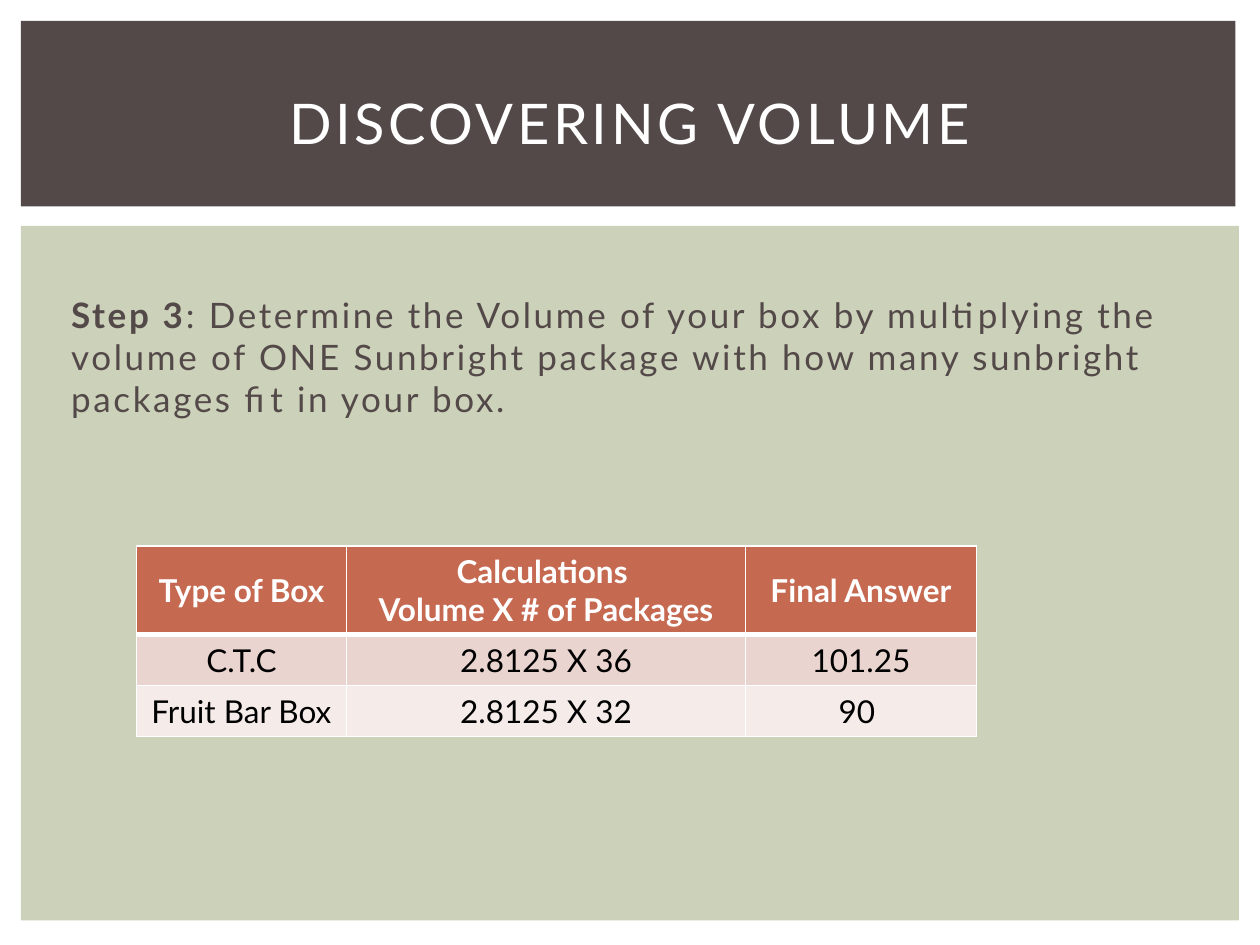
from dataclasses import dataclass

from lxml.etree import SubElement
from pptx import Presentation
from pptx.dml.color import RGBColor
from pptx.enum.shapes import MSO_SHAPE
from pptx.enum.text import MSO_ANCHOR, PP_ALIGN
from pptx.oxml.ns import qn
from pptx.util import Pt

FONT = "Lato"
WHITE, BLACK, BROWN = "FFFFFF", "000000", "534949"
SAGE, RUST = "CCD1B9", "C66951"


@dataclass
class Panel:
    left: float
    top: float
    width: float
    height: float
    color: str


@dataclass
class TableRow:
    cells: tuple
    height: float
    fill: str
    color: str = BLACK
    bold: bool = False
    bottom_line: float = 1


PANELS = [
    Panel(12, 129, 696, 397, SAGE),
    Panel(12, 12, 694, 106, BROWN),
]
COLUMNS = [120, 228, 132]
ROWS = [
    TableRow(("Type of Box", "Calculations \nVolume X # of Packages", "Final Answer"),
             50.4, RUST, WHITE, True, 3),
    TableRow(("C.T.C", "2.8125 X 36", "101.25"), 29.2, "EAD4D0"),
    TableRow(("Fruit Bar Box", "2.8125 X 32", "90 "), 29.2, "F5EBE9"),
]
STEP = [
    ("Step 3", True),
    (": Determine the Volume of your box by multiplying the volume of ONE Sunbright "
     "package with how many sunbright packages fit in your box.", False),
]


def rgb(color: str) -> RGBColor:
    return RGBColor.from_string(color)


def style(font, size: float, color: str, bold: bool = False) -> None:
    font.name = FONT
    font.size = Pt(size)
    font.bold = bold
    font.color.rgb = rgb(color)


def add_spaced_run(p, text: str, spacing: float):
    r = p.add_run()
    r.text = text
    r._r.get_or_add_rPr().set("spc", str(int(spacing * 100)))
    return r


def add_panel(s, panel: Panel) -> None:
    sp = s.shapes.add_shape(MSO_SHAPE.RECTANGLE, Pt(panel.left), Pt(panel.top),
                            Pt(panel.width), Pt(panel.height))
    sp.shadow.inherit = False
    sp.fill.solid()
    sp.fill.fore_color.rgb = rgb(panel.color)
    sp.line.fill.background()


def set_title(s, text: str) -> None:
    sp = s.shapes.title
    sp.left, sp.top, sp.width, sp.height = Pt(30), Pt(28), Pt(660), Pt(83)
    sp.element.getparent().append(sp.element)
    tf = sp.text_frame
    tf.vertical_anchor = MSO_ANCHOR.MIDDLE
    p = tf.paragraphs[0]
    p.alignment = PP_ALIGN.CENTER
    style(p.font, 32, WHITE)
    add_spaced_run(p, text, 2)


def add_step(s) -> None:
    tf = s.shapes.add_textbox(Pt(33.6), Pt(164), Pt(658), Pt(80)).text_frame
    tf.word_wrap = True
    p = tf.paragraphs[0]
    for text, bold in STEP:
        r = add_spaced_run(p, text, 1.5)
        style(r.font, 20, BROWN, bold)


def set_borders(cell, bottom: float, top: float) -> None:
    tc_pr = cell._tc.get_or_add_tcPr()
    widths = {"a:lnL": 1, "a:lnR": 1, "a:lnT": top, "a:lnB": bottom}
    for tag, width in widths.items():
        ln = SubElement(tc_pr, qn(tag), w=str(Pt(width)))
        fill = SubElement(ln, qn("a:solidFill"))
        SubElement(fill, qn("a:srgbClr"), val=WHITE)


def fill_cell(cell, text: str, row: TableRow, top: float) -> None:
    set_borders(cell, row.bottom_line, top)
    cell.fill.solid()
    cell.fill.fore_color.rgb = rgb(row.fill)
    cell.vertical_anchor = MSO_ANCHOR.MIDDLE
    cell.text = text
    for p in cell.text_frame.paragraphs:
        p.alignment = PP_ALIGN.CENTER
        style(p.font, 18, row.color, row.bold)


def add_volume_table(s) -> None:
    height = sum(row.height for row in ROWS)
    table = s.shapes.add_table(len(ROWS), len(COLUMNS), Pt(78), Pt(312),
                               Pt(sum(COLUMNS)), Pt(height)).table
    for column, width in zip(table.columns, COLUMNS):
        column.width = Pt(width)
    top = 1
    for i, row in enumerate(ROWS):
        table.rows[i].height = Pt(row.height)
        for j, text in enumerate(row.cells):
            fill_cell(table.cell(i, j), text, row, top)
        top = row.bottom_line


def main() -> None:
    prs = Presentation()
    prs.slide_width, prs.slide_height = Pt(720), Pt(540)
    s = prs.slides.add_slide(prs.slide_layouts[5])
    for panel in PANELS:
        add_panel(s, panel)
    add_step(s)
    set_title(s, "DISCOVERING VOLUME")
    add_volume_table(s)
    prs.save("out.pptx")


if __name__ == "__main__":
    main()
